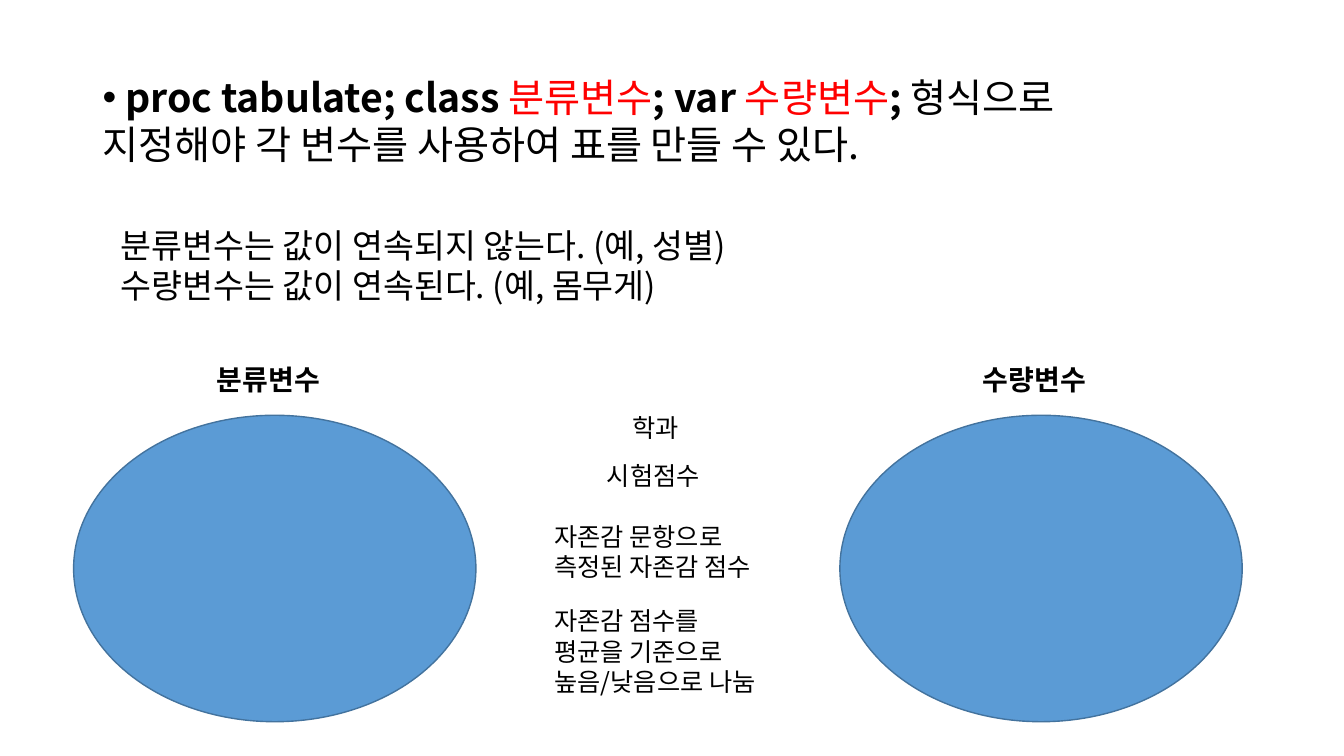
from lxml.etree import SubElement
from pptx import Presentation
from pptx.dml.color import RGBColor
from pptx.enum.shapes import MSO_SHAPE
from pptx.enum.text import MSO_ANCHOR, MSO_AUTO_SIZE, PP_ALIGN
from pptx.oxml.ns import qn
from pptx.util import Pt

EMU_PER_PX = 9144  # 100 px to the inch
BLACK = RGBColor(0x00, 0x00, 0x00)
WHITE = RGBColor(0xFF, 0xFF, 0xFF)
RED = RGBColor(0xFF, 0x00, 0x00)
BLUE = RGBColor(0x5B, 0x9B, 0xD5)
DARK_BLUE = RGBColor(0x43, 0x73, 0x9E)

PLAIN = {"bold": False}
STRONG = {"bold": True}
VARIABLE = {"bold": False, "color": RED}


def px(*lengths):
    return [length * EMU_PER_PX for length in lengths]


class SlideBuilder:
    font_name = "Noto Sans CJK KR"
    frame_format = {
        "word_wrap": False,
        "auto_size": MSO_AUTO_SIZE.SHAPE_TO_FIT_TEXT,
        "vertical_anchor": MSO_ANCHOR.TOP,
    }

    def __init__(self, slide):
        self.slide = slide

    def fill_frame(self, frame, lines, size):
        """Each line is a list of (text, format) pairs."""
        for name, value in self.frame_format.items():
            setattr(frame, name, value)
        for number, line in enumerate(lines):
            paragraph = frame.add_paragraph() if number else frame.paragraphs[0]
            paragraph.alignment = PP_ALIGN.LEFT
            for text, style in line:
                run = paragraph.add_run()
                run.text = text
                values = {"size": Pt(size), "name": self.font_name, **style}
                run.font.color.rgb = values.pop("color", BLACK)
                for name, value in values.items():
                    setattr(run.font, name, value)
                SubElement(run._r.get_or_add_rPr(), qn("a:ea"), typeface=self.font_name)

    def text(self, box, lines, size):
        frame = self.slide.shapes.add_textbox(*px(*box)).text_frame
        self.fill_frame(frame, lines, size)
        return frame

    def bullet(self, paragraph):
        properties = paragraph._p.get_or_add_pPr()
        SubElement(properties, qn("a:buFont"), typeface="Arial")
        SubElement(properties, qn("a:buChar"), char="•")

    def shape(self, kind, box, fill):
        shape = self.slide.shapes.add_shape(kind, *px(*box))
        shape.shadow.inherit = False
        shape.fill.solid()
        shape.fill.fore_color.rgb = fill
        return shape

    def ellipse(self, box):
        line = self.shape(MSO_SHAPE.OVAL, box, BLUE).line
        line.color.rgb = DARK_BLUE
        line.width = Pt(1)

    def card(self, box, lines):
        card = self.shape(MSO_SHAPE.RECTANGLE, box, WHITE)
        card.line.fill.background()
        self.fill_frame(card.text_frame, [[(line, PLAIN)] for line in lines], 18)


def main():
    presentation = Presentation()
    presentation.slide_width, presentation.slide_height = px(1333, 750)
    builder = SlideBuilder(presentation.slides.add_slide(presentation.slide_layouts[6]))

    # Syntax rule
    syntax = builder.text((92, 68, 1028, 104), [
        [
            (" proc tabulate; class ", STRONG),
            ("분류변수", VARIABLE),
            ("; var ", STRONG),
            ("수량변수", VARIABLE),
            ("; ", STRONG),
            ("형식으로", PLAIN),
        ],
        [("지정해야 각 변수를 사용하여 표를 만들 수 있다.", PLAIN)],
    ], 28)
    builder.bullet(syntax.paragraphs[0])

    # Definitions
    builder.text((110, 218, 687, 91), [
        [("분류변수는 값이 연속되지 않는다. (예, 성별)", PLAIN)],
        [("수량변수는 값이 연속된다. (예, 몸무게)", PLAIN)],
    ], 24)

    # Groups to sort into
    for group, left in (("분류변수", 73), ("수량변수", 833)):
        builder.ellipse((left, 412, 399, 304))
        builder.text((left + 132, 355, 132, 44), [[(group, STRONG)]], 20)

    # Examples to be sorted
    for box, lines in (
        ((617, 404, 71, 40), ["학과"]),
        ((592, 452, 121, 40), ["시험점수"]),
        ((540, 512, 240, 71), ["자존감 문항으로", "측정된 자존감 점수"]),
        ((540, 596, 241, 101), ["자존감 점수를", "평균을 기준으로", "높음/낮음으로 나눔"]),
    ):
        builder.card(box, lines)

    presentation.save("out.pptx")


if __name__ == "__main__":
    main()
